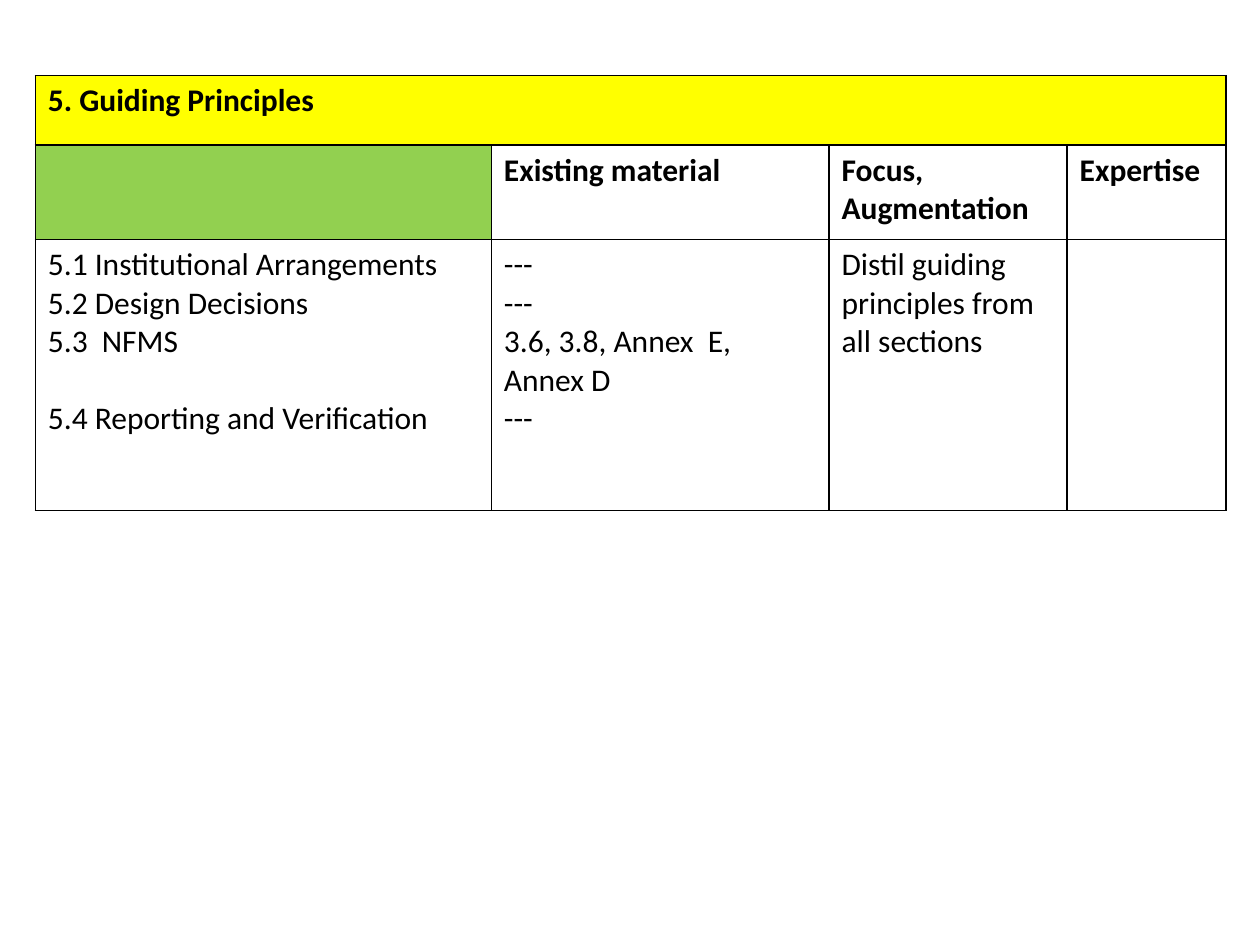
from lxml.etree import SubElement
from pptx import Presentation
from pptx.dml.color import RGBColor
from pptx.oxml.ns import qn
from pptx.util import Inches, Pt

COLORS = {"text": "000000", "border": "000000", "title": "FFFF00",
          "corner": "92D050", "plain": "FFFFFF"}
FONT = "Calibri"
COLS = [3.62, 2.68, 1.89, 1.26]
ROWS = [0.55, 0.75, 2.15]

TITLE = "5. Guiding Principles"
HEADERS = ["", "Existing material", "Focus, Augmentation", "Expertise"]
SECTIONS = ["5.1 Institutional Arrangements", "5.2 Design Decisions",
            "5.3  NFMS", "5.4 Reporting and Verification"]
MATERIAL = ["---", "---", "3.6, 3.8, Annex  E, Annex D", "---"]
FOCUS = ["Distil guiding principles from all sections"]


def write(tf, lines, size=18, bold=False, color="text"):
    for i, line in enumerate(lines):
        p = tf.paragraphs[0] if i == 0 else tf.add_paragraph()
        if not line:
            continue
        r = p.add_run()
        r.text = line
        r.font.name = FONT
        r.font.size = Pt(size)
        r.font.bold = bold
        r.font.color.rgb = RGBColor.from_string(COLORS[color])


def style_cell(cell, fill="plain", width=1):
    # Borders come before the fill in the cell properties
    tc_pr = cell._tc.get_or_add_tcPr()
    for side in ("lnL", "lnR", "lnT", "lnB"):
        ln = SubElement(tc_pr, qn(f"a:{side}"), w=str(Pt(width)))
        solid = SubElement(ln, qn("a:solidFill"))
        SubElement(solid, qn("a:srgbClr"), val=COLORS["border"])
    cell.fill.solid()
    cell.fill.fore_color.rgb = RGBColor.from_string(COLORS[fill])


def add_principles_table(s, left, top, width, height):
    table = s.shapes.add_table(len(ROWS), len(COLS), left, top, width, height).table
    for col, share in zip(table.columns, COLS):
        col.width = int(width * share / sum(COLS))
    for row, share in zip(table.rows, ROWS):
        row.height = int(height * share / sum(ROWS))

    fills = {(0, c): "title" for c in range(len(COLS))}
    fills[1, 0] = "corner"
    for r in range(len(ROWS)):
        for c in range(len(COLS)):
            style_cell(table.cell(r, c), fills.get((r, c), "plain"))

    # Title row
    table.cell(0, 0).merge(table.cell(0, len(COLS) - 1))
    write(table.cell(0, 0).text_frame, [TITLE], bold=True)

    # Column headings
    for c, heading in enumerate(HEADERS):
        write(table.cell(1, c).text_frame, [heading], bold=True)

    # Contents
    for c, lines in enumerate([SECTIONS, MATERIAL, FOCUS]):
        write(table.cell(2, c).text_frame, lines)
    # One line of space keeps 5.4 level with its material, which wraps above
    table.cell(2, 0).text_frame.paragraphs[-1].space_before = Pt(22)


def main():
    prs = Presentation()
    prs.slide_width, prs.slide_height = Inches(10), Inches(7.5)
    s = prs.slides.add_slide(prs.slide_layouts[6])
    add_principles_table(s, Inches(0.28), Inches(0.6), Inches(9.45), Inches(3.45))
    prs.save("out.pptx")


if __name__ == "__main__":
    main()
